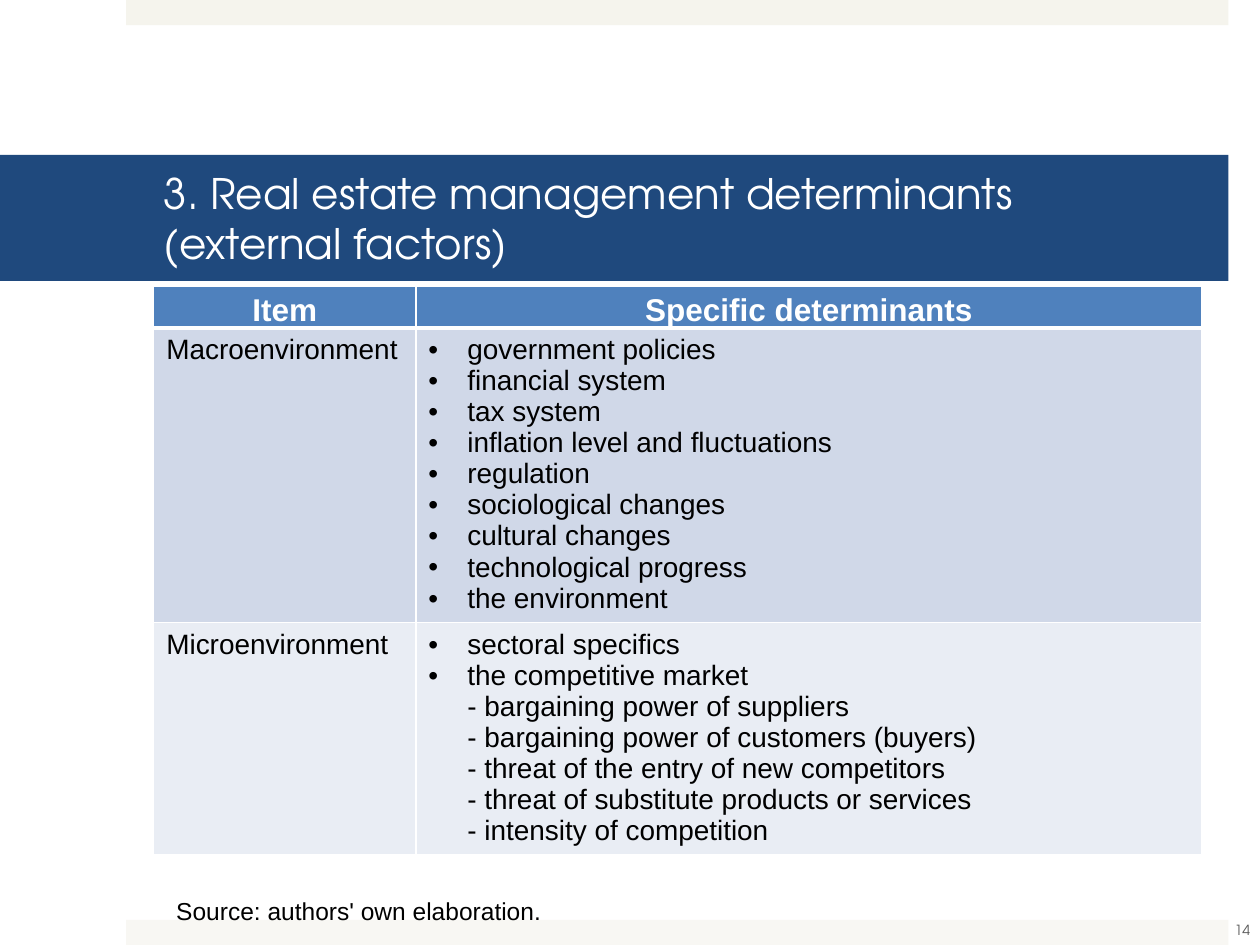
"""Build the slide on external determinants of real estate management."""
import lxml.etree
import pptx
import pptx.dml.color
import pptx.enum.shapes
import pptx.enum.text
import pptx.oxml.ns
import pptx.util

RGBColor = pptx.dml.color.RGBColor
WHITE = RGBColor(0xFF, 0xFF, 0xFF)
BLACK = RGBColor(0, 0, 0)
GREY = RGBColor(0x59, 0x59, 0x59)
NAVY = RGBColor(0x1F, 0x49, 0x7D)
HEADER_BLUE = RGBColor(0x4F, 0x81, 0xBD)
BAND_DARK = RGBColor(0xD0, 0xD8, 0xE8)
BAND_LIGHT = RGBColor(0xE9, 0xED, 0xF4)
STRIP_TOP = RGBColor(0xF5, 0xF4, 0xED)
STRIP_BOTTOM = RGBColor(0xF8, 0xF7, 0xF3)

BODY_FONT = "Arial"
TITLE_FONT = "TeX Gyre Adventor"
WIDTH, HEIGHT = 10, 7.5
INDENT = 0.31
PP_ALIGN = pptx.enum.text.PP_ALIGN
MIDDLE = pptx.enum.text.MSO_ANCHOR.MIDDLE

HEADERS = ["Item", "Specific determinants"]
GROUPS = [
    ("Macroenvironment", BAND_DARK,
     ["government policies", "financial system", "tax system",
      "inflation level and fluctuations", "regulation",
      "sociological changes", "cultural changes",
      "technological progress", "the environment"], []),
    ("Microenvironment", BAND_LIGHT,
     ["sectoral specifics", "the competitive market"],
     ["bargaining power of suppliers",
      "bargaining power of customers (buyers)",
      "threat of the entry of new competitors",
      "threat of substitute products or services",
      "intensity of competition"]),
]


def inches(box):
    """Convert a sequence of inches to lengths."""
    return [pptx.util.Inches(value) for value in box]


def set_margins(holder, left, top, right, bottom):
    """Set the inner margins of a text frame or cell."""
    (holder.margin_left, holder.margin_top,
     holder.margin_right, holder.margin_bottom) = inches((left, top, right, bottom))


def add_run(paragraph, text, size, color, font=BODY_FONT, bold=False):
    """Append one formatted run."""
    run = paragraph.add_run()
    run.text = text
    run.font.size = pptx.util.Pt(size)
    run.font.name = font
    run.font.bold = bold
    run.font.color.rgb = color


def add_strip(slide, box, color):
    """Draw a plain decorative strip."""
    shape = slide.shapes.add_shape(
        pptx.enum.shapes.MSO_SHAPE.RECTANGLE, *inches(box))
    shape.shadow.inherit = False
    shape.fill.solid()
    shape.fill.fore_color.rgb = color
    shape.line.fill.background()


def place_title(slide, box, lines):
    """Turn the title placeholder into a filled band."""
    title = slide.shapes.title
    title.left, title.top, title.width, title.height = inches(box)
    title.fill.solid()
    title.fill.fore_color.rgb = NAVY
    frame = title.text_frame
    frame.auto_size = pptx.enum.text.MSO_AUTO_SIZE.NONE
    frame.word_wrap = True
    frame.vertical_anchor = MIDDLE
    set_margins(frame, 1.3, 0.05, 0.3, 0.05)
    paragraph = frame.paragraphs[0]
    paragraph.alignment = PP_ALIGN.LEFT
    for index, line in enumerate(lines):
        if index:
            paragraph.add_line_break()
        add_run(paragraph, line, 24, WHITE, TITLE_FONT)


def style_cell(cell, color, bottom_width=1):
    """Give a cell white borders and a solid fill."""
    properties = cell._tc.get_or_add_tcPr()
    for side, width in (("L", 1), ("R", 1), ("T", 1), ("B", bottom_width)):
        line = lxml.etree.SubElement(
            properties, pptx.oxml.ns.qn(f"a:ln{side}"), w=str(pptx.util.Pt(width)))
        fill = lxml.etree.SubElement(line, pptx.oxml.ns.qn("a:solidFill"))
        lxml.etree.SubElement(fill, pptx.oxml.ns.qn("a:srgbClr"), val=str(WHITE))
    cell.fill.solid()
    cell.fill.fore_color.rgb = color


def indent_paragraph(paragraph, bulleted):
    """Indent a list paragraph, hanging a bullet where wanted."""
    properties = paragraph._p.get_or_add_pPr()
    indent = pptx.util.Inches(INDENT)
    properties.set("marL", str(indent))
    properties.set("indent", str(-indent if bulleted else 0))
    if bulleted:
        lxml.etree.SubElement(
            properties, pptx.oxml.ns.qn("a:buFont"), typeface=BODY_FONT)
        lxml.etree.SubElement(properties, pptx.oxml.ns.qn("a:buChar"), char="•")


def fill_list(frame, bullets, details):
    """Write bulleted items followed by dashed details."""
    items = [(text, True) for text in bullets]
    items += [(f"- {text}", False) for text in details]
    for index, (text, bulleted) in enumerate(items):
        paragraph = frame.add_paragraph() if index else frame.paragraphs[0]
        indent_paragraph(paragraph, bulleted)
        add_run(paragraph, text, 16, BLACK)


def add_determinants_table(slide, box):
    """Build the table of determinants inside the box."""
    table = slide.shapes.add_table(len(GROUPS) + 1, len(HEADERS), *inches(box)).table
    for column, share in zip(table.columns, (0.25, 0.75)):
        column.width = pptx.util.Inches(box[2] * share)
    for row, height in zip(table.rows, (0.31, 2.34, 1.84)):
        row.height = pptx.util.Inches(height)
    for index, text in enumerate(HEADERS):
        cell = table.cell(0, index)
        style_cell(cell, HEADER_BLUE, 3)
        set_margins(cell, 0.05, 0.01, 0.05, 0)
        paragraph = cell.text_frame.paragraphs[0]
        paragraph.alignment = PP_ALIGN.CENTER
        paragraph.line_spacing = 1.15
        add_run(paragraph, text, 18, WHITE, bold=True)
    for index, (name, color, bullets, details) in enumerate(GROUPS, 1):
        name_cell, list_cell = table.cell(index, 0), table.cell(index, 1)
        style_cell(name_cell, color)
        style_cell(list_cell, color)
        add_run(name_cell.text_frame.paragraphs[0], name, 16, BLACK)
        fill_list(list_cell.text_frame, bullets, details)


def add_label(slide, box, text, size, color, font, alignment, anchor):
    """Add a one-line text box."""
    frame = slide.shapes.add_textbox(*inches(box)).text_frame
    frame.word_wrap = True
    frame.vertical_anchor = anchor
    frame.paragraphs[0].alignment = alignment
    add_run(frame.paragraphs[0], text, size, color, font)


def main():
    """Assemble and save the presentation."""
    presentation = pptx.Presentation()
    presentation.slide_width, presentation.slide_height = inches((WIDTH, HEIGHT))
    slide = presentation.slides.add_slide(presentation.slide_layouts[5])
    add_strip(slide, (1, 0, 8.75, 0.2), STRIP_TOP)
    add_strip(slide, (1, HEIGHT - 0.2, 8.75, 0.2), STRIP_BOTTOM)
    place_title(slide, (0, 1.23, 9.75, 1),
                ["3. Real estate management determinants", "(external factors)"])
    add_determinants_table(slide, (1.22, 2.27, 8.32, 4.49))
    add_label(slide, (1.3, 7.06, 3.22, 0.34), "Source: authors' own elaboration.",
              14, BLACK, BODY_FONT, PP_ALIGN.LEFT, pptx.enum.text.MSO_ANCHOR.TOP)
    add_label(slide, (9.61, 7.18, 0.5, 0.4), "14",
              8, GREY, TITLE_FONT, PP_ALIGN.CENTER, MIDDLE)
    presentation.save("out.pptx")


if __name__ == "__main__":
    main()
